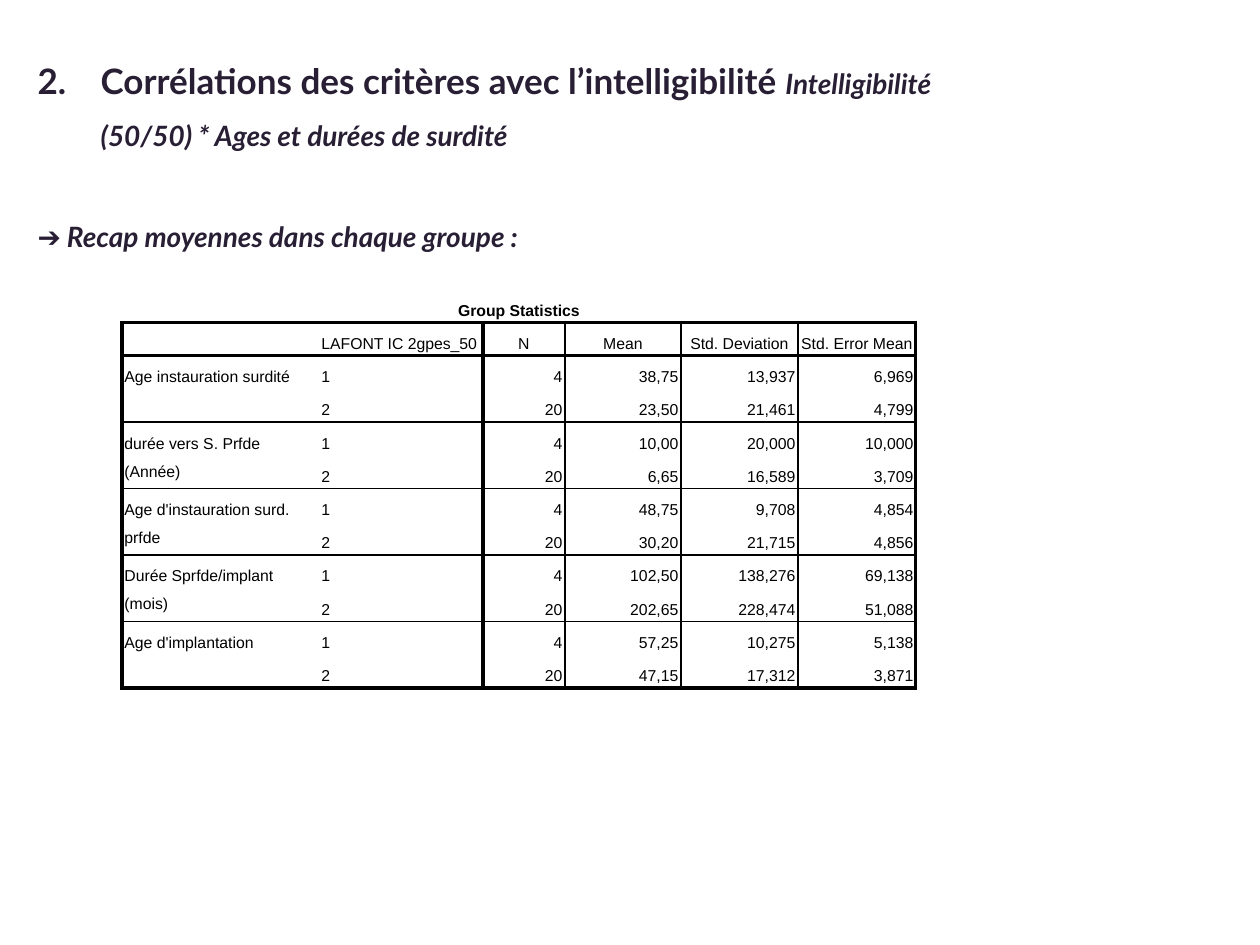
from lxml import etree
from pptx import Presentation
from pptx.dml.color import RGBColor
from pptx.enum.text import MSO_ANCHOR, MSO_AUTO_SIZE, PP_ALIGN
from pptx.oxml.ns import qn
from pptx.util import Inches, Pt

LEFT, CENTER, RIGHT = PP_ALIGN.LEFT, PP_ALIGN.CENTER, PP_ALIGN.RIGHT
TOP, MIDDLE, BOTTOM = MSO_ANCHOR.TOP, MSO_ANCHOR.MIDDLE, MSO_ANCHOR.BOTTOM
PX = Inches(1) // 126

INK, BLACK, WHITE = "291F35", "000000", "FFFFFF"
THICK, THIN, NONE = 2.25, 1, 0


def color(hex_value):
    return RGBColor.from_string(hex_value)


def add_border(cell, side, width):
    """Draw one side (L, R, T or B) of a cell; a width of 0 hides it."""
    properties = cell._tc.get_or_add_tcPr()
    line = etree.SubElement(properties, qn(f"a:ln{side}"), w=str(Pt(width)))
    if width:
        fill = etree.SubElement(line, qn("a:solidFill"))
        etree.SubElement(fill, qn("a:srgbClr"), val=BLACK)
    else:
        etree.SubElement(line, qn("a:noFill"))


presentation = Presentation()
presentation.slide_width = Inches(10)
presentation.slide_height = Inches(7.5)
slide = presentation.slides.add_slide(presentation.slide_layouts[5])

# Heading
title = slide.shapes.title
title.left, title.top, title.width, title.height = 25 * PX, 32 * PX, 948 * PX, 292 * PX
frame = title.text_frame
frame.word_wrap = True
frame.auto_size = MSO_AUTO_SIZE.NONE
frame.vertical_anchor = TOP

heading = frame.paragraphs[0]
recap = frame.add_paragraph()
recap.space_before = Pt(29)
heading_runs = [
    (heading, "Corrélations des critères avec l’intelligibilité ", 20, False),
    (heading, "Intelligibilité (50/50) * Ages et durées de surdité", 16, True),
    (recap, "➔ Recap moyennes dans chaque groupe :", 16, True),
]
for paragraph, text, size, italic in heading_runs:
    run = paragraph.add_run()
    run.text = text
    run.font.size = Pt(size)
    run.font.italic = italic

for paragraph in (heading, recap):
    paragraph.alignment = LEFT
    paragraph.line_spacing = 1.5
    properties = paragraph._p.get_or_add_pPr()
    properties.set("marL", str(63 * PX))
    properties.set("indent", str(-63 * PX))
    if paragraph is heading:
        etree.SubElement(properties, qn("a:buAutoNum"), type="arabicPeriod", startAt="2")
    paragraph.font.name = "Lato"
    paragraph.font.bold = True
    paragraph.font.color.rgb = color(INK)

# Group statistics: each criterion has one row per group
criteria = [
    ("Age instauration surdité",
     ("38,75", "13,937", "6,969"), ("23,50", "21,461", "4,799")),
    ("durée vers S. Prfde (Année)",
     ("10,00", "20,000", "10,000"), ("6,65", "16,589", "3,709")),
    ("Age d'instauration surd. prfde",
     ("48,75", "9,708", "4,854"), ("30,20", "21,715", "4,856")),
    ("Durée Sprfde/implant (mois)",
     ("102,50", "138,276", "69,138"), ("202,65", "228,474", "51,088")),
    ("Age d'implantation",
     ("57,25", "10,275", "5,138"), ("47,15", "17,312", "3,871")),
]
rows = [
    ["Group Statistics", "", "", "", "", ""],
    ["", "LAFONT IC 2gpes_50", "N", "Mean", "Std. Deviation", "Std. Error Mean"],
]
for label, first_group, second_group in criteria:
    rows.append([label, "1", "4", *first_group])
    rows.append(["", "2", "20", *second_group])

column_widths = [197, 164, 82, 116, 117, 118]
vertical_lines = [THICK, NONE, THICK, THIN, THIN, THIN, THICK]
horizontal_lines = [NONE, THICK, THICK] + [NONE, THIN] * 4 + [NONE, THICK]

table = slide.shapes.add_table(
    len(rows), len(column_widths), 122 * PX, 289 * PX, sum(column_widths) * PX, 399 * PX
).table
table.first_row = False
table.horz_banding = False
for column, width in zip(table.columns, column_widths):
    column.width = width * PX

table.cell(0, 0).merge(table.cell(0, 5))
for row_index in range(2, len(rows), 2):
    table.cell(row_index, 0).merge(table.cell(row_index + 1, 0))

for row_index, row in enumerate(rows):
    for column_index, text in enumerate(row):
        cell = table.cell(row_index, column_index)
        cell.margin_left = cell.margin_right = Inches(0.02)
        cell.margin_top = cell.margin_bottom = Inches(0.02)
        cell.vertical_anchor = {0: MIDDLE, 1: BOTTOM}.get(row_index, TOP)

        is_caption = row_index == 0
        bottom = row_index + (cell.span_height if cell.is_merge_origin else 1)
        add_border(cell, "L", NONE if is_caption else vertical_lines[column_index])
        add_border(cell, "R", NONE if is_caption else vertical_lines[column_index + 1])
        add_border(cell, "T", horizontal_lines[row_index])
        add_border(cell, "B", horizontal_lines[bottom])
        cell.fill.solid()
        cell.fill.fore_color.rgb = color(WHITE)

        paragraph = cell.text_frame.paragraphs[0]
        if text:
            paragraph.text = text
        if is_caption or (row_index == 1 and column_index > 1):
            paragraph.alignment = CENTER
        else:
            paragraph.alignment = RIGHT if column_index > 1 else LEFT
        paragraph.line_spacing = Pt(16)
        paragraph.font.name = "Arial"
        paragraph.font.size = Pt(9)
        paragraph.font.bold = is_caption
        paragraph.font.color.rgb = color(BLACK)

presentation.save("out.pptx")
